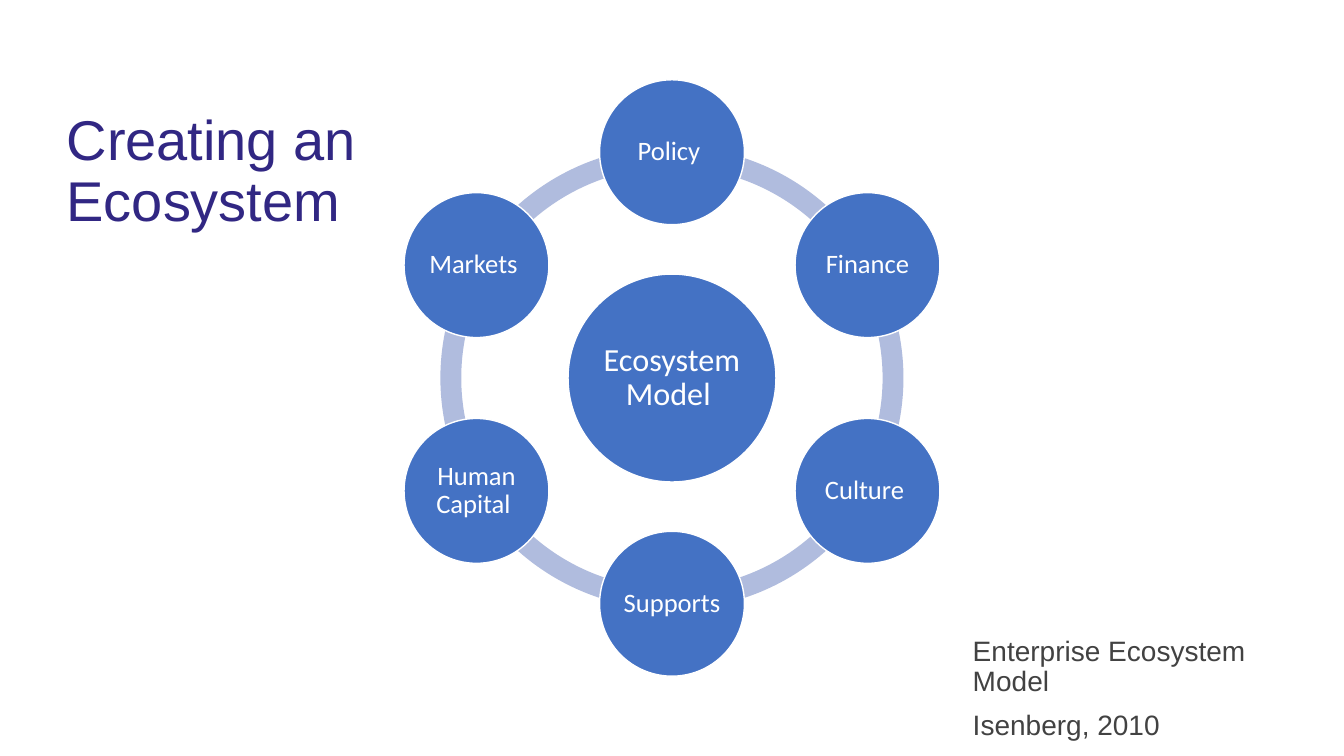
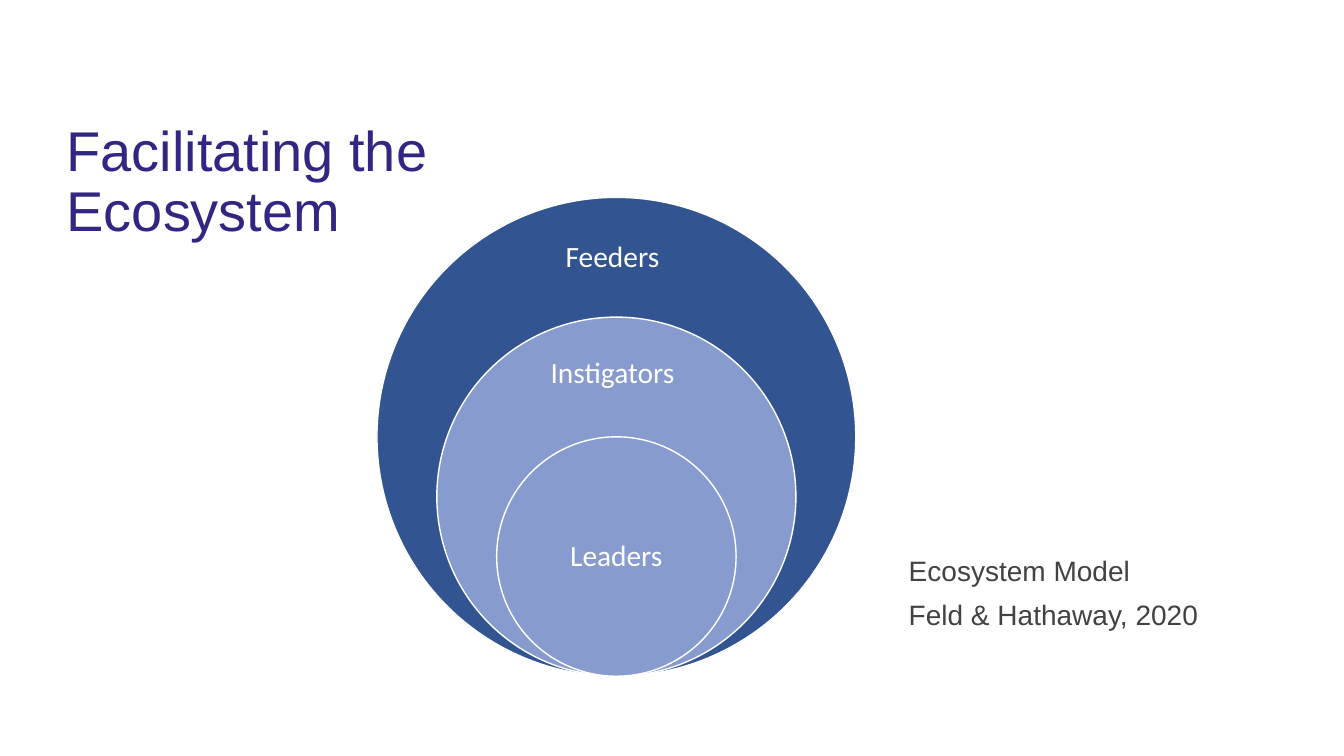
"""Build two slides about ecosystem models."""
import math

import pptx
import pptx.dml.color
import pptx.enum.shapes
import pptx.enum.text
import pptx.util

PX = 9525
INK = {"title": "312783", "note": "424242", "arc": "B0BCDE", "node": "4472C4",
       "dark": "325491", "light": "879BCE", "white": "FFFFFF"}
KIND = pptx.enum.shapes.MSO_SHAPE
ALIGN = pptx.enum.text.PP_ALIGN
ANCHOR = pptx.enum.text.MSO_ANCHOR


def emu(*sizes):
    """Turn px into EMU."""
    return [pptx.util.Emu(round(size * PX)) for size in sizes]


def tint(name):
    """Return the named colour."""
    return pptx.dml.color.RGBColor.from_string(INK[name])


def write(shape, lines, size, font, ink, align, anchor, inset=None):
    """Fill a shape with styled lines of text."""
    frame = shape.text_frame
    frame.word_wrap = True
    frame.vertical_anchor = anchor
    if inset is not None:
        pad = emu(inset)[0]
        frame.margin_left = frame.margin_right = pad
        frame.margin_top = frame.margin_bottom = pad
    for rank, line in enumerate(lines):
        para = frame.add_paragraph() if rank else frame.paragraphs[0]
        para.alignment = align
        para.line_spacing = 0.9
        if rank:
            para.space_before = pptx.util.Pt(10)
        run = para.add_run()
        run.text = line
        run.font.size = pptx.util.Pt(size)
        run.font.name = font
        run.font.color.rgb = tint(ink)


def label(shape, text, size):
    """Centre a white label in a shape, using its full width."""
    write(shape, [text], size, "Calibri", "white", ALIGN.CENTER, ANCHOR.MIDDLE, 0)


def title(slide, box, text):
    """Place the slide title."""
    write(slide.shapes.add_textbox(*emu(*box)), [text], 40, "Arial", "title",
          ALIGN.LEFT, ANCHOR.BOTTOM)


def source(slide, left, top, lines):
    """Place the note that names the model and its authors."""
    write(slide.shapes.add_textbox(*emu(left, top, 339, 99)), lines, 20, "Arial",
          "note", ALIGN.LEFT, ANCHOR.TOP)


def disc(slide, kind, mid_x, mid_y, size, fill, edge=True):
    """Place a round shape about its centre."""
    box = emu(mid_x - size / 2, mid_y - size / 2, size, size)
    shape = slide.shapes.add_shape(kind, *box)
    shape.shadow.inherit = False
    shape.fill.solid()
    shape.fill.fore_color.rgb = tint(fill)
    if edge:
        shape.line.color.rgb = tint("white")
        shape.line.width = pptx.util.Pt(1)
    else:
        shape.line.fill.background()
    return shape


def wheel(slide, left, top, size, hub, names):
    """Place a hub with a ring of linked nodes in a square box."""
    node = 138
    mid_x, mid_y = left + size / 2, top + size / 2
    reach = (size - node) / 2
    step = 360 / len(names)
    turns = [(270 + step * rank) % 360 for rank in range(len(names))]
    for turn in turns:
        arc = disc(slide, KIND.BLOCK_ARC, mid_x, mid_y, 441, "arc", False)
        arc.adjustments[0] = turn * 0.6
        arc.adjustments[1] = (turn + step) % 360 * 0.6
        arc.adjustments[2] = 0.045
    label(disc(slide, KIND.OVAL, mid_x, mid_y, 198, "node"), hub, 23)
    for turn, name in zip(turns, names):
        angle = math.radians(turn)
        spot = disc(slide, KIND.OVAL, mid_x + reach * math.cos(angle),
                    mid_y + reach * math.sin(angle), node, "node")
        label(spot, name, 19)


def nest(slide, left, top, size, rings, core):
    """Place circles that share their lowest point in a square box."""
    mid_x, base = left + size / 2, top + size
    step = size / 4
    for rank, (name, fill, drop, high) in enumerate(rings):
        wide = size - step * rank
        disc(slide, KIND.OVAL, mid_x, base - wide / 2, wide, fill)
        box = emu(mid_x - 80, base - wide + drop, 159, high)
        label(slide.shapes.add_textbox(*box), name, 21)
    wide = size - step * len(rings)
    label(disc(slide, KIND.OVAL, mid_x, base - wide / 2, wide, "light"), core, 21)


def main():
    """Build and save the deck."""
    deck = pptx.Presentation()
    deck.slide_width, deck.slide_height = emu(1280, 720)
    blank = deck.slide_layouts[6]

    slide = deck.slides.add_slide(blank)
    title(slide, (54, 35, 320, 192), "Creating an Ecosystem")
    source(slide, 917, 602, ["Enterprise Ecosystem Model", "Isenberg, 2010"])
    wheel(slide, 356, 76, 568, "Ecosystem Model ",
          ["Policy ", "Finance", "Culture ", "Supports ", "Human Capital ", "Markets "])

    slide = deck.slides.add_slide(blank)
    title(slide, (54, 45, 520, 192), "Facilitating the Ecosystem")
    nest(slide, 359, 188, 456,
         [("Feeders ", "dark", 24, 68), ("Instigators ", "light", 22, 64)], "Leaders")
    source(slide, 856, 526, ["Ecosystem Model", "Feld & Hathaway, 2020"])

    deck.save("out.pptx")


if __name__ == "__main__":
    main()
